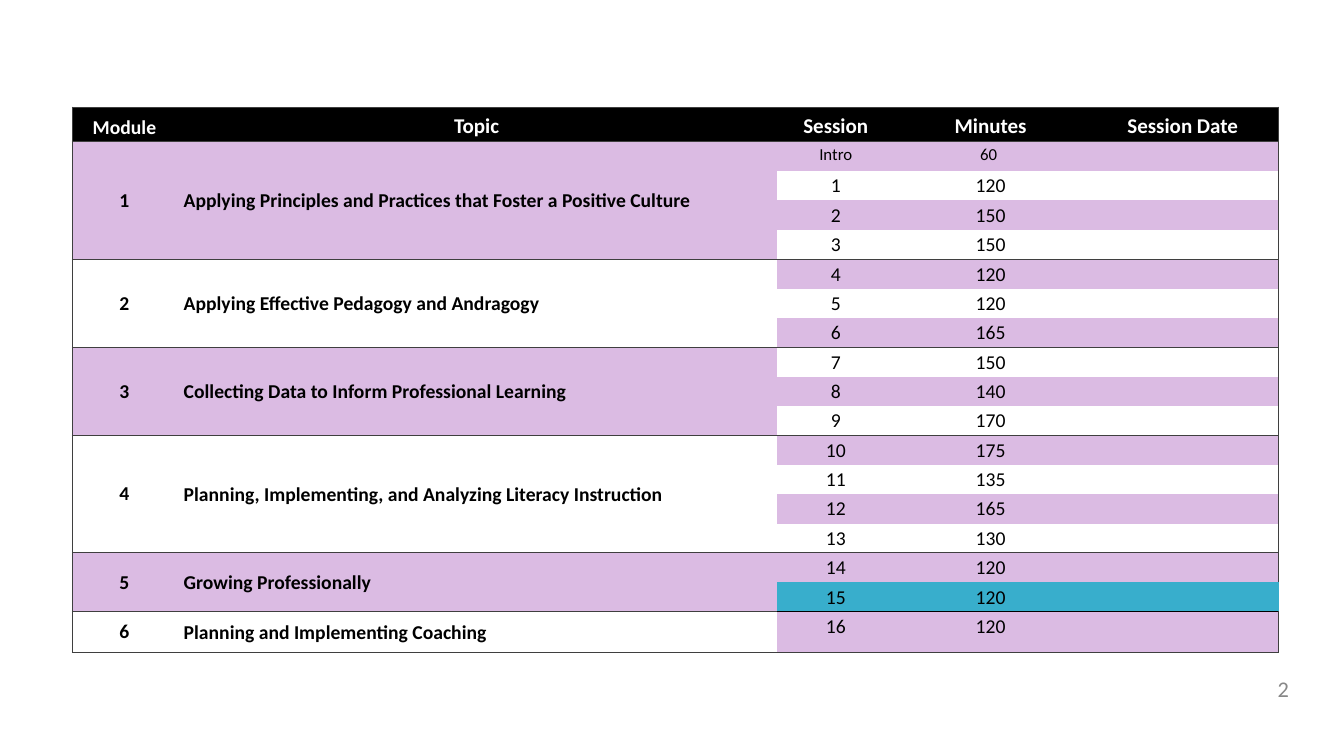
from dataclasses import dataclass

from lxml import etree
from pptx import Presentation
from pptx.dml.color import RGBColor
from pptx.enum.text import MSO_ANCHOR, PP_ALIGN
from pptx.oxml.ns import qn
from pptx.table import Table, _Cell
from pptx.text.text import _Paragraph

PX = 9525
LEFT, CENTER, RIGHT = PP_ALIGN.LEFT, PP_ALIGN.CENTER, PP_ALIGN.RIGHT
TOP, MIDDLE, BOTTOM = MSO_ANCHOR.TOP, MSO_ANCHOR.MIDDLE, MSO_ANCHOR.BOTTOM
FONT = "Calibri"
COLORS = {
    "black": "000000",
    "white": "FFFFFF",
    "lilac": "DBBBE3",
    "teal": "38AECC",
    "rule": "3F3F3F",
    "number": "888888",
}
HEADERS = ["Module", "Topic", "Session", "Minutes", "Session Date"]
COL_WIDTHS = [99, 572, 112, 183, 183]
HEADER_H, SESSION_H, LAST_H = 33, 28, 39
HIGHLIGHTED = "15"


@dataclass(frozen=True)
class Module:
    topic: str
    sessions: dict[str, str]


@dataclass(frozen=True)
class CellFormat:
    size: int = 14
    bold: bool = False
    color: str = "black"
    align: PP_ALIGN = CENTER
    anchor: MSO_ANCHOR = TOP
    margins: tuple[int, int, int, int] = (6, 3, 6, 2)


MODULES = [
    Module("Applying Principles and Practices that Foster a Positive Culture",
           {"Intro": "60 ", "1": "120", "2": "150", "3": "150"}),
    Module("Applying Effective Pedagogy and Andragogy",
           {"4": "120", "5": "120", "6": "165"}),
    Module("Collecting Data to Inform Professional Learning",
           {"7": "150", "8": "140", "9": "170"}),
    Module("Planning, Implementing, and Analyzing Literacy Instruction",
           {"10": "175", "11": "135", "12": "165", "13": "130"}),
    Module("Growing Professionally", {"14": "120", "15": "120"}),
    Module("Planning and Implementing Coaching", {"16": "120"}),
]
MODULE_FORMAT = CellFormat(bold=True, anchor=MIDDLE, margins=(7, 0, 7, 0))
TOPIC_FORMAT = CellFormat(bold=True, align=LEFT, anchor=MIDDLE, margins=(7, 3, 7, 2))


def rgb(name: str) -> RGBColor:
    return RGBColor.from_string(COLORS[name])


def write(p: _Paragraph, text: str, size: int, bold: bool, color: str, align: PP_ALIGN) -> None:
    from_points = size * 12700
    p.alignment = align
    if not text:
        etree.SubElement(p._p, qn("a:endParaRPr"), sz=str(size * 100))
        return
    r = p.add_run()
    r.text = text
    for name, value in {"name": FONT, "size": from_points, "bold": bold}.items():
        setattr(r.font, name, value)
    r.font.color.rgb = rgb(color)


def draw_borders(cell: _Cell, borders: dict[str, str]) -> None:
    tc_pr = cell._tc.get_or_add_tcPr()
    for side in "LRTB":
        ln = etree.SubElement(tc_pr, qn(f"a:ln{side}"), w="12700")
        if side in borders:
            fill = etree.SubElement(ln, qn("a:solidFill"))
            etree.SubElement(fill, qn("a:srgbClr"), val=COLORS[borders[side]])
        else:
            etree.SubElement(ln, qn("a:noFill"))


def fill_cell(cell: _Cell, text: str, fill: str, fmt: CellFormat, borders: dict[str, str]) -> None:
    draw_borders(cell, borders)
    cell.fill.solid()
    cell.fill.fore_color.rgb = rgb(fill)
    cell.vertical_anchor = fmt.anchor
    for side, margin in zip(("left", "top", "right", "bottom"), fmt.margins):
        setattr(cell, f"margin_{side}", margin * PX)
    write(cell.text_frame.paragraphs[0], text, fmt.size, fmt.bold, fmt.color, fmt.align)


def draw_header(table: Table) -> None:
    for col, text in enumerate(HEADERS):
        fmt = CellFormat(14 if col == 0 else 15, True, "white", anchor=BOTTOM)
        borders = {"T": "rule", "B": "rule"}
        if col == 0:
            borders["L"] = "rule"
        if col == len(HEADERS) - 1:
            borders["R"] = "rule"
        fill_cell(table.cell(0, col), text, "black", fmt, borders)


def draw_module(table: Table, number: int, module: Module, first: int) -> int:
    last = first + len(module.sessions) - 1
    band = "lilac" if number % 2 else "white"
    for row, (session, minutes) in enumerate(module.sessions.items(), first):
        is_first = row == first
        for col, text, fmt in ((0, str(number), MODULE_FORMAT), (1, module.topic, TOPIC_FORMAT)):
            borders = {"L": "rule"} if col == 0 else {}
            if is_first:
                borders["T"] = "rule"
            if is_first or row == last:
                borders["B"] = "rule"
            fill_cell(table.cell(row, col), text if is_first else "", band, fmt, borders)

        highlighted = session == HIGHLIGHTED
        fill = "teal" if highlighted else "lilac" if row % 2 else "white"
        fmt = CellFormat(12 if session == "Intro" else 14)
        for col, text in enumerate((session, minutes, ""), 2):
            borders = {}
            if is_first:
                borders["T"] = "black" if number == len(MODULES) else "rule"
            if row == last:
                borders["B"] = "black" if highlighted else "rule"
            if col == 4 and not highlighted:
                borders["R"] = "rule"
            fill_cell(table.cell(row, col), text, fill, fmt, borders)
    if last > first:
        for col in (0, 1):
            table.cell(first, col).merge(table.cell(last, col))
    return last + 1


def main() -> None:
    prs = Presentation()
    prs.slide_width, prs.slide_height = 1280 * PX, 720 * PX
    s = prs.slides.add_slide(prs.slide_layouts[6])

    count = sum(len(module.sessions) for module in MODULES)
    heights = [HEADER_H] + [SESSION_H] * (count - 1) + [LAST_H]
    table = s.shapes.add_table(
        len(heights), len(COL_WIDTHS), 69 * PX, 102 * PX,
        sum(COL_WIDTHS) * PX, sum(heights) * PX).table
    table.first_row = table.horz_banding = False
    for column, width in zip(table.columns, COL_WIDTHS):
        column.width = width * PX
    for row, height in zip(table.rows, heights):
        row.height = height * PX

    draw_header(table)
    first = 1
    for number, module in enumerate(MODULES, 1):
        first = draw_module(table, number, module, first)

    tf = s.shapes.add_textbox(1013 * PX, 641 * PX, 224 * PX, 29 * PX).text_frame
    tf.word_wrap = True
    tf.vertical_anchor = MIDDLE
    write(tf.paragraphs[0], "2", 16, False, "number", RIGHT)
    prs.save("out.pptx")


if __name__ == "__main__":
    main()
